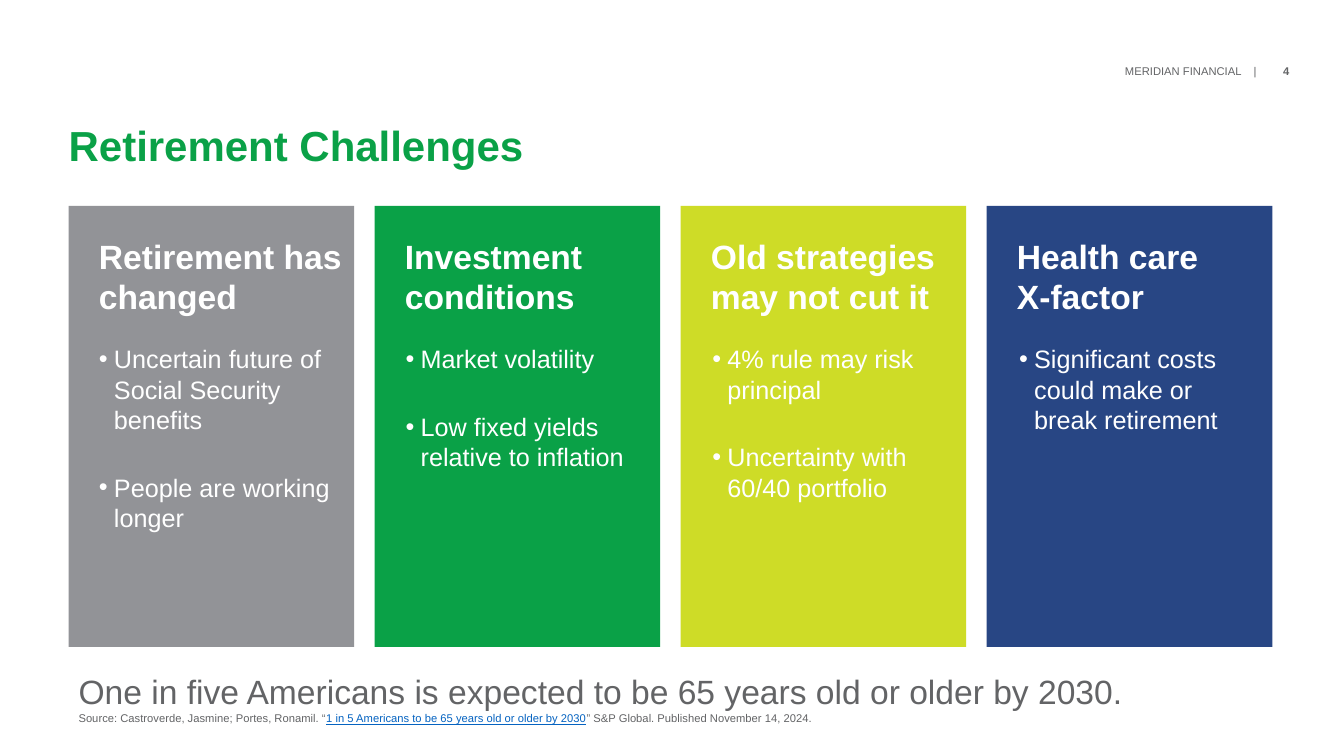
import pptx
import pptx.util
import pptx.dml.color
import pptx.enum.shapes
import pptx.enum.text
import pptx.oxml.ns
from lxml import etree

Pt = pptx.util.Pt
ALIGN = pptx.enum.text.PP_ALIGN
COLORS = {
    "gray": "929397",
    "green": "0AA147",
    "lime": "CEDC27",
    "navy": "284684",
    "text": "636466",
    "link": "0563C1",
    "white": "FFFFFF",
}
CARDS = [
    ("gray", ["Retirement has changed"],
     ["Uncertain future of Social Security benefits", "People are working longer"]),
    ("green", ["Investment conditions"],
     ["Market volatility", "Low fixed yields relative to inflation"]),
    ("lime", ["Old strategies may not cut it"],
     ["4% rule may risk principal", "Uncertainty with 60/40 portfolio"]),
    ("navy", ["Health care", "X-factor"],
     ["Significant costs could make or break retirement"]),
]
CARD_LEFT, CARD_PITCH, BODY_PITCH = 49, 218.6, 219.1
CARD_WIDTH = 204
BULLET_INDENT = 10.8
BULLET_GAP = 26.7


class SlideBuilder:
    font = "Arial"

    def __init__(self, page):
        self.page = page

    def color(self, name):
        return pptx.dml.color.RGBColor.from_string(COLORS[name])

    def frame(self, shape, margins):
        frame = shape.text_frame
        frame.word_wrap = True
        frame.vertical_anchor = pptx.enum.text.MSO_ANCHOR.TOP
        (frame.margin_left, frame.margin_top,
         frame.margin_right, frame.margin_bottom) = map(Pt, margins)
        return frame

    def text_box(self, left, top, width, height, margins=(0, 0, 0, 0)):
        box = self.page.shapes.add_textbox(Pt(left), Pt(top), Pt(width), Pt(height))
        return self.frame(box, margins)

    def card(self, left, top, width, height, fill):
        shape = self.page.shapes.add_shape(
            pptx.enum.shapes.MSO_SHAPE.RECTANGLE, Pt(left), Pt(top), Pt(width), Pt(height))
        shape.shadow.inherit = False
        shape.fill.solid()
        shape.fill.fore_color.rgb = self.color(fill)
        shape.line.fill.background()
        return self.frame(shape, (21.6, 21.6, 7.2, 3.6))

    def paragraph(self, frame, index, align=ALIGN.LEFT):
        para = frame.paragraphs[0] if index == 0 else frame.add_paragraph()
        para.alignment = align
        return para

    def span(self, para, text, size, color, bold=False, underline=False):
        span = para.add_run()
        span.text = text
        font = span.font
        font.name, font.size = self.font, Pt(size)
        font.bold, font.underline = bold, underline
        font.color.rgb = self.color(color)

    def add_property(self, para, tag, **attributes):
        properties = para._p.get_or_add_pPr()
        return etree.SubElement(properties, pptx.oxml.ns.qn(tag), **attributes)

    def bullets(self, frame, items):
        for index, item in enumerate(items):
            para = self.paragraph(frame, index)
            if index:
                para.space_before = Pt(BULLET_GAP)
            properties = para._p.get_or_add_pPr()
            properties.set("marL", str(Pt(BULLET_INDENT)))
            properties.set("indent", str(-Pt(BULLET_INDENT)))
            self.add_property(para, "a:buFont", typeface=self.font)
            self.add_property(para, "a:buChar", char="•")
            self.span(para, item, 18, "white")


def main():
    deck = pptx.Presentation()
    deck.slide_width, deck.slide_height = Pt(960), Pt(540)
    page = deck.slides.add_slide(deck.slide_layouts[6])
    builder = SlideBuilder(page)

    header = builder.paragraph(builder.text_box(758, 46, 163, 11), 0, ALIGN.RIGHT)
    tabs = builder.add_property(header, "a:tabLst")
    etree.SubElement(tabs, pptx.oxml.ns.qn("a:tab"), pos=str(Pt(113)), algn="l")
    builder.span(header, "MERIDIAN FINANCIAL    |\t", 8, "text")
    builder.span(header, "4", 8, "text", bold=True)

    title = builder.paragraph(builder.text_box(CARD_LEFT, 90.7, 860, 52.6), 0)
    title.line_spacing = Pt(31)
    builder.span(title, "Retirement Challenges", 30, "green", bold=True)

    for column, (fill, heading, items) in enumerate(CARDS):
        card = builder.card(CARD_LEFT + column * CARD_PITCH, 147, CARD_WIDTH, 315, fill)
        for index, line in enumerate(heading):
            builder.span(builder.paragraph(card, index), line, 24, "white", bold=True)
        body = builder.text_box(CARD_LEFT + column * BODY_PITCH, 245.5, 203, 214,
                                (21.6, 0, 14.4, 0))
        builder.bullets(body, items)

    footer = builder.text_box(CARD_LEFT, 476, 774, 46, (7.2, 3.6, 7.2, 3.6))
    builder.span(builder.paragraph(footer, 0),
                 "One in five Americans is expected to be 65 years old or older by 2030.",
                 24, "text")
    source = builder.paragraph(footer, 1)
    builder.span(source, "Source: Castroverde, Jasmine; Portes, Ronamil. “", 8, "text")
    builder.span(source, "1 in 5 Americans to be 65 years old or older by 2030", 8, "link",
                 underline=True)
    builder.span(source, "” S&P Global. Published November 14, 2024.", 8, "text")

    deck.save("out.pptx")


if __name__ == "__main__":
    main()
